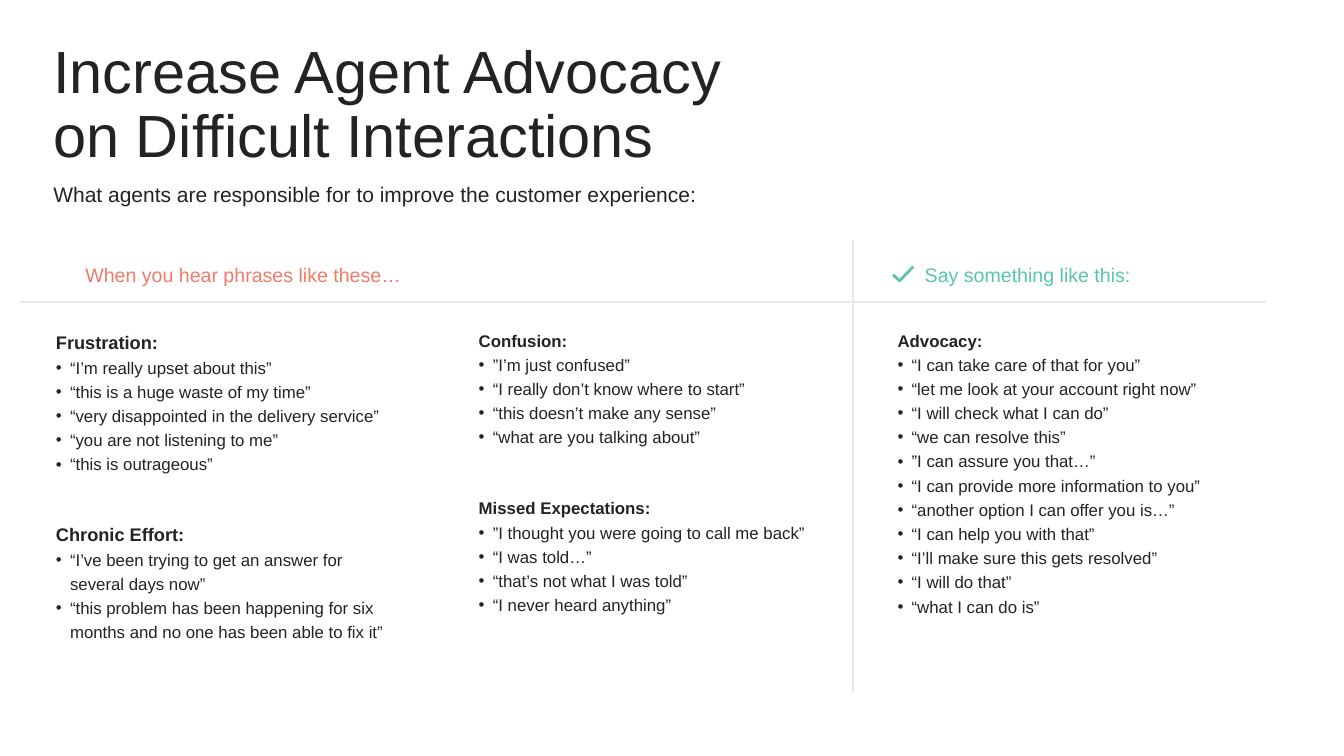
from dataclasses import dataclass

from lxml.etree import SubElement
from pptx import Presentation
from pptx.dml.color import RGBColor
from pptx.enum.shapes import MSO_CONNECTOR as CONN
from pptx.enum.text import MSO_AUTO_SIZE as FIT
from pptx.oxml.ns import qn
from pptx.util import Cm, Pt


@dataclass(frozen=True)
class Theme:
    """Colours, font and type sizes of the slide."""
    font: str = "Arial"
    ink: str = "242324"
    rule: str = "E9E9E8"
    hear: str = "ED7C69"
    say: str = "5AC5A8"
    title: int = 85
    subtitle: int = 30
    heading: int = 28
    large_label: int = 26
    body: int = 24
    rule_width: int = 3
    check_width: int = 4


T = Theme()
LEFT, MIDDLE, RIGHT = 2.69, 24, 45.11
PHRASES = [
    ("Frustration:", T.large_label, (LEFT, 16.36, 17.55, 7.24), [
        "“I’m really upset about this”",
        "“this is a huge waste of my time”",
        "“very disappointed in the delivery service”",
        "“you are not listening to me”",
        "“this is outrageous”",
    ]),
    ("Chronic Effort:", T.large_label, (LEFT, 26.04, 17.35, 6.07), [
        "“I’ve been trying to get an answer for several days now”",
        "“this problem has been happening for six months and no one has been able to fix it”",
    ]),
    ("Confusion:", T.body, (MIDDLE, 16.31, 15.93, 5.94), [
        "”I’m just confused”",
        "“I really don’t know where to start”",
        "“this doesn’t make any sense”",
        "“what are you talking about”",
    ]),
    ("Missed Expectations:", T.body, (MIDDLE, 24.77, 17.35, 5.94), [
        "”I thought you were going to call me back”",
        "“I was told…”",
        "“that’s not what I was told”",
        "“I never heard anything”",
    ]),
    ("Advocacy:", T.body, (RIGHT, 16.31, 17.55, 14.2), [
        "“I can take care of that for you”",
        "“let me look at your account right now”",
        "“I will check what I can do”",
        "“we can resolve this”",
        "”I can assure you that…”",
        "“I can provide more information to you”",
        "“another option I can offer you is…”",
        "“I can help you with that”",
        "“I’ll make sure this gets resolved”",
        "“I will do that”",
        "“what I can do is”",
    ]),
]


def add_frame(slide, box, inset=0.13, wrap=True):
    """Add an empty text box and return its text frame."""
    tf = slide.shapes.add_textbox(*map(Cm, box)).text_frame
    tf.word_wrap = wrap
    tf.auto_size = FIT.SHAPE_TO_FIT_TEXT
    tf.margin_left = tf.margin_right = tf.margin_top = tf.margin_bottom = Cm(inset)
    return tf


def write(p, text, size=T.body, color=T.ink, bold=False, spacing=1.0, bullet=False):
    """Write formatted text into a paragraph."""
    p.line_spacing = spacing
    r = p.add_run()
    r.text = text
    r.font.name, r.font.size, r.font.bold = T.font, Pt(size), bold
    r.font.color.rgb = RGBColor.from_string(color)
    if bullet:
        pPr = p._p.get_or_add_pPr()
        pPr.set("marL", str(Cm(0.71)))
        pPr.set("indent", str(-Cm(0.71)))
        SubElement(pPr, qn("a:buFont"), typeface=T.font)
        SubElement(pPr, qn("a:buChar"), char="•")


def add_header(slide, box):
    """Place the title and the subtitle below it."""
    x, y, w, h = box
    title = add_frame(slide, (x, y, w, h), inset=0.15)
    write(title.paragraphs[0], "Increase Agent Advocacy on Difficult Interactions",
          size=T.title, spacing=0.9)
    subtitle = add_frame(slide, (x, y + h + 0.17, w + 1.65, 1.45), inset=0.15)
    write(subtitle.paragraphs[0],
          "What agents are responsible for to improve the customer experience:",
          size=T.subtitle, spacing=1.1)


def add_rule(slide, x1, y1, x2, y2):
    """Draw one straight divider."""
    s = slide.shapes.add_connector(CONN.STRAIGHT, Cm(x1), Cm(y1), Cm(x2), Cm(y2))
    s.line.color.rgb = RGBColor.from_string(T.rule)
    s.line.width = Pt(T.rule_width)
    SubElement(s._element.spPr, qn("a:effectLst"))


def add_dividers(slide, box):
    """Cross the content area with a vertical and a horizontal divider."""
    x, y, w, h = box
    add_rule(slide, x + 42.01, y, x + 42.01, y + h)
    add_rule(slide, x, y + 3.12, x + w, y + 3.12)


def add_check(slide, box):
    """Draw a check mark that fills the box."""
    x, y, w, h = box
    start, *rest = [(Cm(x + fx * w), Cm(y + fy * h))
                    for fx, fy in [(0, 0.58), (0.33, 1), (1, 0)]]
    builder = slide.shapes.build_freeform(*start)
    builder.add_line_segments(rest, close=False)
    s = builder.convert_to_shape()
    s.shadow.inherit = False
    s.fill.background()
    s.line.color.rgb = RGBColor.from_string(T.say)
    s.line.width = Pt(T.check_width)


def add_headings(slide, box):
    """Place the two column headings and the check mark."""
    x, y, w, h = box
    hear = add_frame(slide, (x, y, 16.2, h), wrap=False)
    write(hear.paragraphs[0], "When you hear phrases like these…",
          size=T.heading, color=T.hear)
    say_x = x + w - 10.67
    say = add_frame(slide, (say_x, y, 10.67, h), wrap=False)
    write(say.paragraphs[0], "Say something like this:", size=T.heading, color=T.say)
    add_check(slide, (say_x - 1.47, y + 0.31, 1.02, 0.71))


def add_phrases(slide, box, label, size, phrases):
    """Place a bold label with its bulleted phrases."""
    tf = add_frame(slide, box)
    write(tf.paragraphs[0], label, size=size, bold=True, spacing=1.2)
    for phrase in phrases:
        write(tf.add_paragraph(), phrase, spacing=1.2, bullet=True)


def main():
    """Build and save the slide."""
    prs = Presentation()
    prs.slide_width, prs.slide_height = Cm(67.74), Cm(38.1)
    slide = prs.slides.add_slide(prs.slide_layouts[6])
    add_header(slide, (2.54, 1.96, 36.96, 6.76))
    add_dividers(slide, (0.99, 12.12, 62.81, 22.78))
    add_headings(slide, (4.17, 13.13, 52.98, 1.35))
    for label, size, box, phrases in PHRASES:
        add_phrases(slide, box, label, size, phrases)
    prs.save("out.pptx")


if __name__ == "__main__":
    main()
